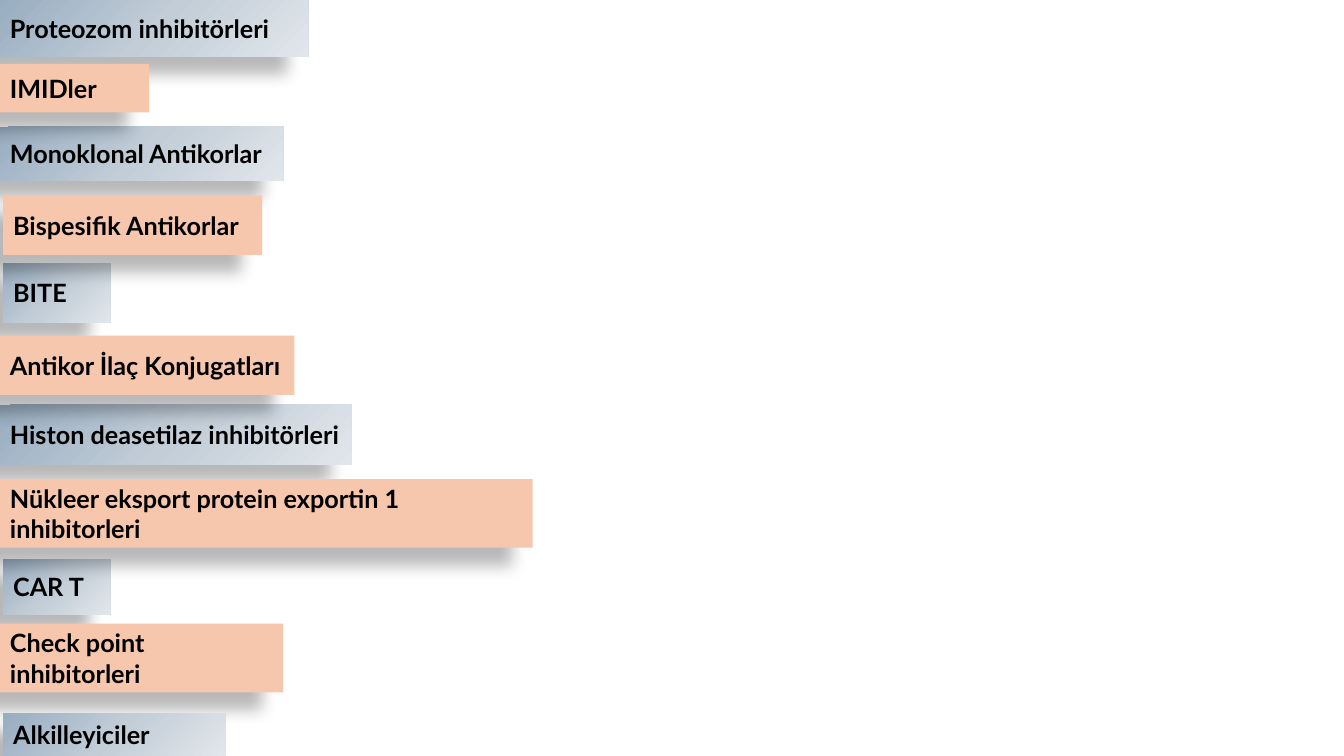
import copy

import lxml.etree
import pptx
import pptx.dml.color
import pptx.enum.shapes
import pptx.enum.text
import pptx.oxml.ns
import pptx.util

Pt = pptx.util.Pt
qn = pptx.oxml.ns.qn
PEACH = ["F6C6AD"]
STEEL = ["98ADC1", "C2CDD7", "E1E6EB"]


def rgb(value):
    return pptx.dml.color.RGBColor.from_string(value)


def add_shadow(shape):
    shape.shadow.inherit = False
    effects = shape._element.spPr.find(qn("a:effectLst"))
    shadow = lxml.etree.SubElement(
        effects, qn("a:outerShdw"), blurRad=str(Pt(11.8)), dist=str(Pt(19.7)),
        dir=str(141 * 60000), algn="ctr", rotWithShape="0")
    color = lxml.etree.SubElement(shadow, qn("a:srgbClr"), val="000000")
    lxml.etree.SubElement(color, qn("a:alpha"), val="28000")


drug_classes = [
    ("Proteozom inhibitörleri", 0, 0, 220.3, 40.3, STEEL),
    ("Monoklonal Antikorlar", 0, 90.5, 202.5, 38.5, STEEL),
    ("BITE", 2.3, 188, 76.6, 42.4, STEEL),
    ("Histon deasetilaz inhibitörleri", 0, 289.3, 251.2, 42.4, STEEL),
    ("CAR T", 2.3, 399.4, 76.6, 39.2, STEEL),
    ("Bispesifik Antikorlar", 2.3, 139.7, 185, 42.4, PEACH),
    ("Nükleer eksport protein exportin 1 inhibitorleri", 0, 342.2, 380.5, 49, PEACH),
    ("IMIDler", 0, 45.7, 106.4, 34.6, PEACH),
    ("Antikor İlaç Konjugatları", 0, 239.7, 210.3, 42.4, PEACH),
    ("Check point inhibitorleri", 0, 445.5, 202.3, 49, PEACH),
    ("Alkilleyiciler", 2.3, 509.5, 159.1, 30.4, STEEL),
]

presentation = pptx.Presentation()
presentation.slide_width = Pt(960)
presentation.slide_height = Pt(540)
slide = presentation.slides.add_slide(presentation.slide_layouts[6])

for label, left, top, width, height, colors in drug_classes:
    shape = slide.shapes.add_shape(
        pptx.enum.shapes.MSO_SHAPE.RECTANGLE, Pt(left), Pt(top), Pt(width), Pt(height))
    if colors == PEACH:
        shape.fill.solid()
        shape.fill.fore_color.rgb = rgb(colors[0])
    else:
        shape.fill.gradient()
        shape.fill.gradient_angle = 315
        stop_list = shape._element.spPr.find(qn("a:gradFill")).find(qn("a:gsLst"))
        stop_list.insert(1, copy.deepcopy(stop_list[0]))
        for index, stop in enumerate(shape.fill.gradient_stops):
            stop.position = index / 2
            stop.color.rgb = rgb(colors[index])
    shape.line.fill.background()
    add_shadow(shape)

    text_frame = shape.text_frame
    text_frame.text = label
    text_frame.word_wrap = True
    text_frame.vertical_anchor = pptx.enum.text.MSO_ANCHOR.MIDDLE
    paragraph = text_frame.paragraphs[0]
    paragraph.alignment = pptx.enum.text.PP_ALIGN.LEFT
    font = paragraph.runs[0].font
    font.name = "Lato"
    font.size = Pt(18)
    font.bold = True
    font.color.rgb = rgb("000000")

presentation.save("out.pptx")
